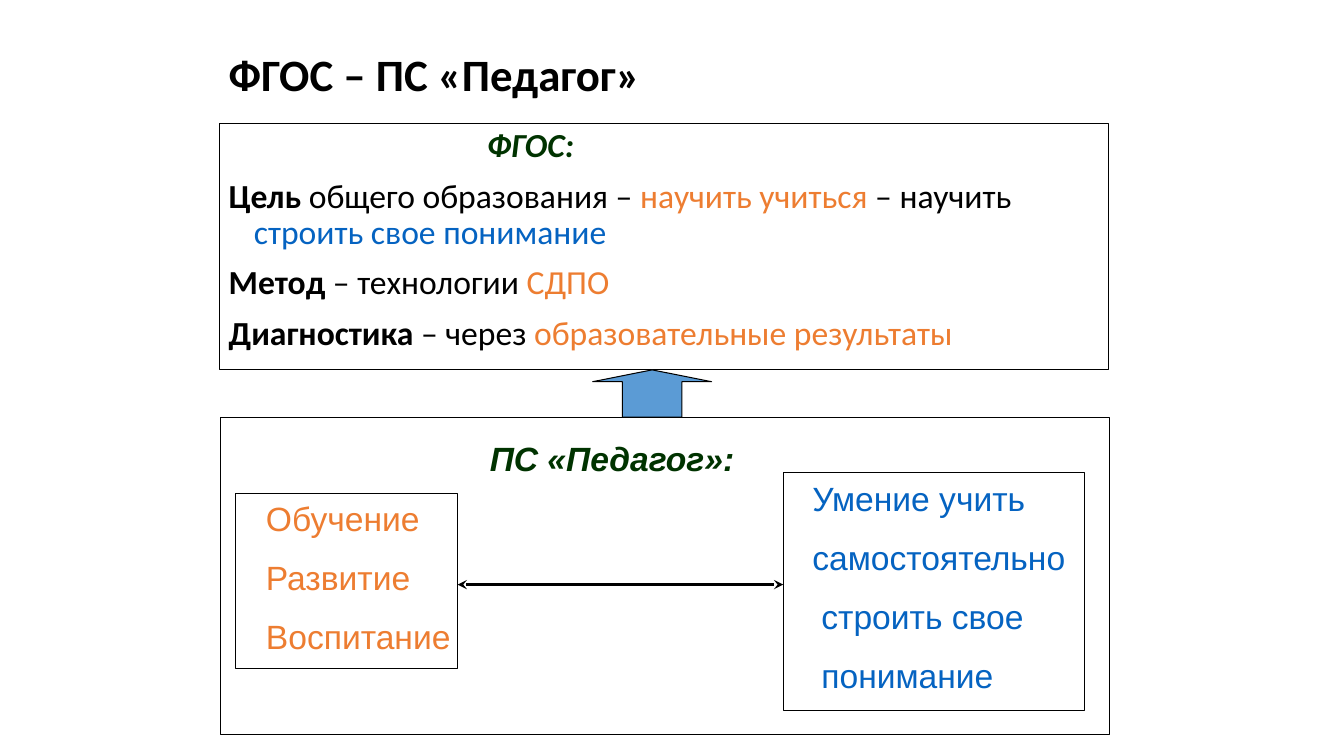
"""Builds a slide relating the educational standard to the teacher's professional standard."""
from dataclasses import dataclass
from typing import Optional

import lxml.etree
import pptx
import pptx.dml.color
import pptx.enum.shapes
import pptx.enum.text
import pptx.oxml.ns
import pptx.presentation
import pptx.slide
import pptx.text.text
import pptx.util

RGBColor = pptx.dml.color.RGBColor
BLACK = RGBColor(0x00, 0x00, 0x00)
GREEN = RGBColor(0x00, 0x33, 0x00)
ORANGE = RGBColor(0xED, 0x7D, 0x31)
BLUE = RGBColor(0x05, 0x63, 0xC1)
ARROW_BLUE = RGBColor(0x5B, 0x9B, 0xD5)

SLIDE_WIDTH = pptx.util.Inches(13.33)
SLIDE_HEIGHT = pptx.util.Inches(7.5)
COLUMN = SLIDE_WIDTH / 100
ROW = SLIDE_HEIGHT / 100
HANGING = 0.25


@dataclass(frozen=True)
class Area:
    """A rectangle in hundredths of the slide's width and height."""

    left: float
    top: float
    width: float
    height: float

    def emu(self) -> tuple[int, int, int, int]:
        """Return the rectangle in slide units."""
        return (round(self.left * COLUMN), round(self.top * ROW),
                round(self.width * COLUMN), round(self.height * ROW))


@dataclass(frozen=True)
class Span:
    """A stretch of text in one format."""

    text: str
    color: RGBColor = BLACK
    bold: bool = False
    italic: bool = False


@dataclass(frozen=True)
class Line:
    """A paragraph with its left margin and hanging indent in inches."""

    spans: tuple[Span, ...]
    margin: float = 0
    hanging: float = 0


@dataclass(frozen=True)
class Block:
    """A text box with the format its paragraphs share."""

    area: Area
    lines: tuple[Line, ...]
    font: str
    size: float = 24
    line_spacing: float = 1.0
    space_before: float = 0
    middle: bool = False


def heading(text: str, margin: float) -> Line:
    """Describe a green heading."""
    return Line((Span(text, GREEN, bold=True, italic=True),), margin)


def statement(term: str, *rest: Span) -> Line:
    """Describe a bold term followed by its explanation."""
    return Line((Span(term, bold=True), *rest), HANGING, HANGING)


TITLE = Block(Area(16.28, 4, 67.5, 12.4),
              (Line((Span("ФГОС – ПС «Педагог»", bold=True),)),),
              "Calibri", 32, line_spacing=0.9, middle=True)
STANDARD = Block(
    Area(16.28, 16.4, 67.5, 72.93),
    (heading("ФГОС:", 2.56),
     statement("Цель", Span(" общего образования – "), Span("научить учиться", ORANGE),
               Span(" – научить "), Span("строить свое понимание", BLUE)),
     statement("Метод", Span(" – технологии "), Span("СДПО", ORANGE)),
     statement("Диагностика", Span(" – через "),
               Span("образовательные результаты", ORANGE))),
    "Calibri", line_spacing=0.9, space_before=10)
TEACHER = Block(
    Area(16.95, 57.33, 65.55, 30.93),
    (heading("ПС «Педагог»:", 2.5),
     *(Line((Span(task, ORANGE),), 0.28)
       for task in ("Обучение", "Развитие", "Воспитание"))),
    "Arial", space_before=13.4)
SKILL = Block(
    Area(54.15, 62.53, 31.28, 30.93),
    tuple(Line((Span(text, BLUE),), margin)
          for text, margin in (("Умение учить", 0.74), ("самостоятельно", 0.74),
                               ("строить свое", 0.83), ("понимание", 0.83))),
    "Arial", space_before=13.4)

STANDARD_FRAME = Area(16.35, 16.4, 66.15, 32.53)
TEACHER_FRAME = Area(16.43, 55.2, 66.15, 42)
TASKS_FRAME = Area(17.55, 65.33, 16.5, 23.07)
SKILL_FRAME = Area(58.28, 62.53, 22.43, 31.47)
SUPPORT_ARROW = Area(44.1, 48.93, 8.85, 6.27)
LINK_ROW = 77.33


def write_line(paragraph: pptx.text.text._Paragraph, line: Line, block: Block) -> None:
    """Fill one paragraph with its formatted spans."""
    paragraph.line_spacing = block.line_spacing
    paragraph.space_before = pptx.util.Pt(block.space_before)
    properties = paragraph._p.get_or_add_pPr()
    properties.set("marL", str(pptx.util.Inches(line.margin)))
    properties.set("indent", str(-pptx.util.Inches(line.hanging)))
    for span in line.spans:
        run = paragraph.add_run()
        run.text = span.text
        run.font.name = block.font
        run.font.size = pptx.util.Pt(block.size)
        run.font.bold = span.bold
        run.font.italic = span.italic
        run.font.color.rgb = span.color


def add_block(slide: pptx.slide.Slide, block: Block) -> None:
    """Draw a text block."""
    frame = slide.shapes.add_textbox(*block.area.emu()).text_frame
    frame.word_wrap = True
    anchors = pptx.enum.text.MSO_ANCHOR
    frame.vertical_anchor = anchors.MIDDLE if block.middle else anchors.TOP
    for index, line in enumerate(block.lines):
        paragraph = frame.add_paragraph() if index else frame.paragraphs[0]
        write_line(paragraph, line, block)


def add_outline(slide: pptx.slide.Slide, area: Area,
                kind: pptx.enum.shapes.MSO_SHAPE = pptx.enum.shapes.MSO_SHAPE.RECTANGLE,
                fill: Optional[RGBColor] = None) -> None:
    """Draw a preset shape with a thin black outline."""
    shape = slide.shapes.add_shape(kind, *area.emu())
    shape.shadow.inherit = False
    if fill is None:
        shape.fill.background()
    else:
        shape.fill.solid()
        shape.fill.fore_color.rgb = fill
    shape.line.color.rgb = BLACK
    shape.line.width = pptx.util.Pt(0.75)
    if kind == pptx.enum.shapes.MSO_SHAPE.UP_ARROW:
        shape.adjustments[0] = 0.5
        shape.adjustments[1] = 0.25


def add_link(slide: pptx.slide.Slide, start: float, end: float, row: float) -> None:
    """Draw a horizontal line with arrowheads at both ends."""
    height = round(row * ROW)
    link = slide.shapes.add_connector(
        pptx.enum.shapes.MSO_CONNECTOR.STRAIGHT,
        round(start * COLUMN), height, round(end * COLUMN), height)
    link.line.color.rgb = BLACK
    link.line.width = pptx.util.Pt(2.25)
    outline = link.line._get_or_add_ln()
    for tag in ("a:headEnd", "a:tailEnd"):
        lxml.etree.SubElement(outline, pptx.oxml.ns.qn(tag), type="stealth")
    lxml.etree.SubElement(link._element.spPr, pptx.oxml.ns.qn("a:effectLst"))


def main() -> None:
    """Build and save the slide."""
    deck: pptx.presentation.Presentation = pptx.Presentation()
    deck.slide_width, deck.slide_height = SLIDE_WIDTH, SLIDE_HEIGHT
    slide = deck.slides.add_slide(deck.slide_layouts[6])
    for block in (TITLE, STANDARD, TEACHER, SKILL):
        add_block(slide, block)
    for area in (STANDARD_FRAME, TASKS_FRAME, SKILL_FRAME, TEACHER_FRAME):
        add_outline(slide, area)
    add_link(slide, TASKS_FRAME.left + TASKS_FRAME.width, SKILL_FRAME.left, LINK_ROW)
    add_outline(slide, SUPPORT_ARROW, pptx.enum.shapes.MSO_SHAPE.UP_ARROW, ARROW_BLUE)
    deck.save("out.pptx")


if __name__ == "__main__":
    main()
